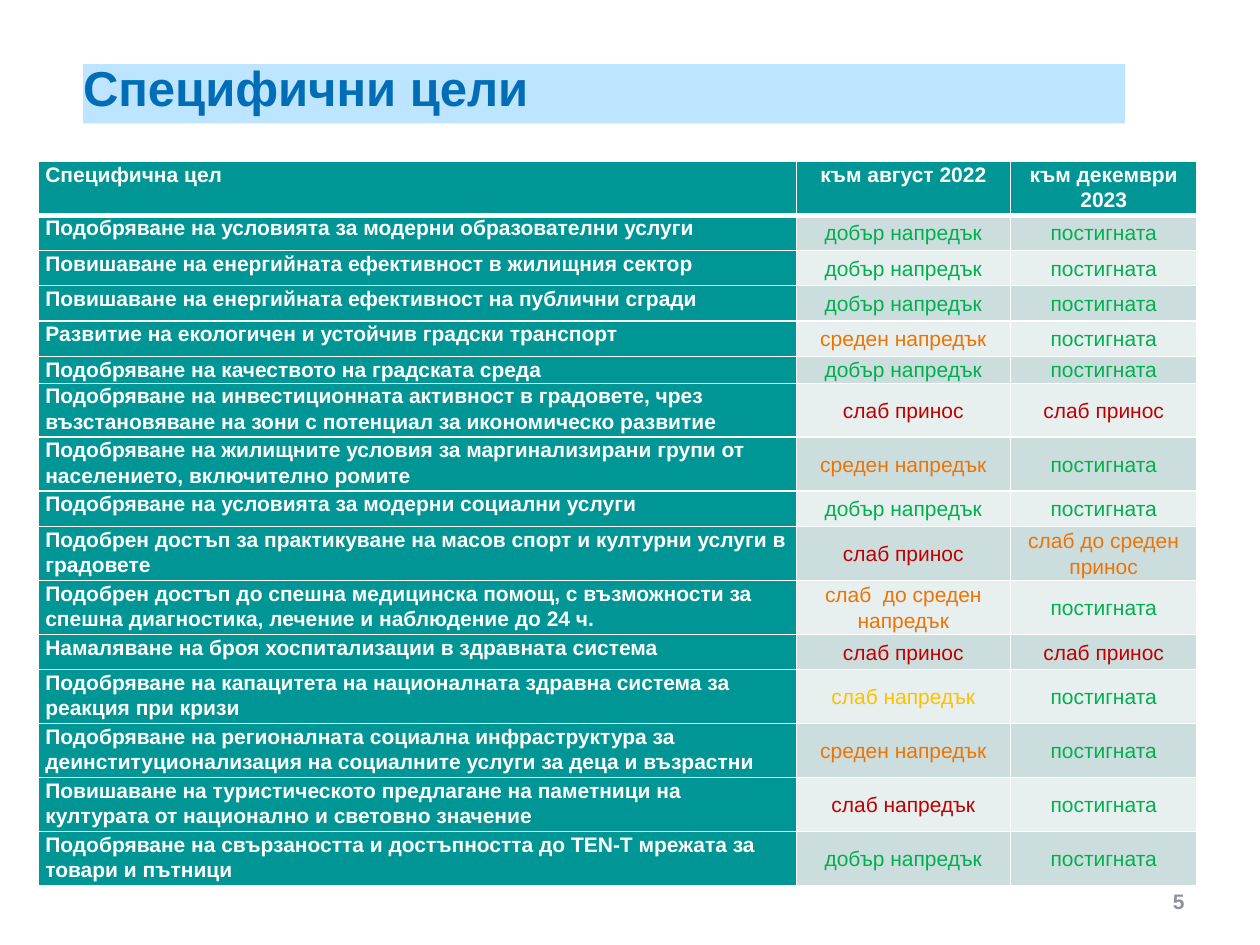
from lxml import etree
from pptx import Presentation
from pptx.dml.color import RGBColor
from pptx.enum import shapes, text
from pptx.oxml import ns
from pptx.util import Inches, Pt

FONT = "Arial"
WHITE, TEAL = "FFFFFF", "009696"
BANDS = ("CCDDDD", "E7EFEF")
GREEN, ORANGE, RED, YELLOW = "00B050", "EC7405", "C00000", "FFC000"

GOOD = ("добър напредък", GREEN)
MEDIUM = ("среден напредък", ORANGE)
WEAK = ("слаб принос", RED)
ACHIEVED = ("постигната", GREEN)

HEADERS = ("Специфична цел", "към август 2022", "към декември 2023")
HEADER_HEIGHT = 0.39
COLUMN_WIDTHS = (6.02, 1.7, 1.48)
GOALS = [
    (0.28, "Подобряване на условията за модерни образователни услуги", GOOD, ACHIEVED),
    (0.28, "Повишаване на енергийната ефективност в жилищния сектор", GOOD, ACHIEVED),
    (0.28, "Повишаване на енергийната ефективност на публични сгради", GOOD, ACHIEVED),
    (0.28, "Развитие на екологичен и устойчив градски транспорт", MEDIUM, ACHIEVED),
    (0.2, "Подобряване на качеството на градската среда", GOOD, ACHIEVED),
    (0.42, "Подобряване на инвестиционната активност в градовете, чрез "
           "възстановяване на зони с потенциал за икономическо развитие", WEAK, WEAK),
    (0.42, "Подобряване на жилищните условия за маргинализирани групи от "
           "населението, включително ромите", MEDIUM, ACHIEVED),
    (0.28, "Подобряване на условията за модерни социални услуги", GOOD, ACHIEVED),
    (0.4, "Подобрен достъп за практикуване на масов спорт и културни услуги в градовете",
     WEAK, ("слаб до среден принос", ORANGE)),
    (0.43, "Подобрен достъп до спешна медицинска помощ, с възможности за "
           "спешна диагностика, лечение и наблюдение до 24 ч.",
     ("слаб  до среден напредък", ORANGE), ACHIEVED),
    (0.28, "Намаляване на броя хоспитализации в здравната система", WEAK, WEAK),
    (0.4, "Подобряване на капацитета на националната здравна система за "
          "реакция при кризи", ("слаб напредък", YELLOW), ACHIEVED),
    (0.42, "Подобряване на регионалната социална инфраструктура за "
           "деинституционализация на социалните услуги за деца и възрастни",
     MEDIUM, ACHIEVED),
    (0.42, "Повишаване на туристическото предлагане на паметници на "
           "културата от национално и световно значение",
     ("слаб напредък", RED), ACHIEVED),
    (0.4, "Подобряване на свързаността и достъпността до TEN-T мрежата за "
          "товари и пътници", GOOD, ACHIEVED),
]


def color(value):
    return RGBColor.from_string(value)


def write(frame, words, size, ink, bold, align):
    paragraph = frame.paragraphs[0]
    paragraph.text = words
    paragraph.alignment = align
    paragraph.font.name = FONT
    paragraph.font.size = Pt(size)
    paragraph.font.bold = bold
    paragraph.font.color.rgb = color(ink)
    return paragraph


def add_title(slide, left, top, width, height):
    shape = slide.shapes.add_shape(
        shapes.MSO_SHAPE.RECTANGLE, left, top, width, height)
    shape.shadow.inherit = False
    shape.fill.solid()
    shape.fill.fore_color.rgb = color("BDE5FF")
    shape.line.fill.background()
    frame = shape.text_frame
    frame.margin_left = frame.margin_right = frame.margin_top = frame.margin_bottom = 0
    frame.vertical_anchor = text.MSO_ANCHOR.TOP
    paragraph = write(frame, "Специфични цели", 28, "006DB6", True, text.PP_ALIGN.LEFT)
    paragraph.line_spacing = Pt(30)


def add_borders(cell, top, bottom):
    properties = cell._tc.get_or_add_tcPr()
    for side, points in (("L", 1), ("R", 1), ("T", top), ("B", bottom)):
        line = etree.SubElement(properties, ns.qn(f"a:ln{side}"), w=str(Pt(points)))
        fill = etree.SubElement(line, ns.qn("a:solidFill"))
        etree.SubElement(fill, ns.qn("a:srgbClr"), val=WHITE)


def fill_cell(cell, row, column, words, ink):
    heading = row == 0 or column == 0
    cell.margin_left = cell.margin_right = Inches(0.06)
    cell.margin_top = cell.margin_bottom = 0
    cell.vertical_anchor = text.MSO_ANCHOR.TOP if heading else text.MSO_ANCHOR.MIDDLE
    add_borders(cell, 3 if row == 1 else 1, 3 if row == 0 else 1)
    cell.fill.solid()
    cell.fill.fore_color.rgb = color(TEAL if heading else BANDS[(row - 1) % 2])
    align = text.PP_ALIGN.CENTER if column else text.PP_ALIGN.LEFT
    paragraph = write(cell.text_frame, words, 12, ink, heading, align)
    paragraph.line_spacing = 1.07


def add_goals_table(slide, left, top, width, height):
    rows = [[(header, WHITE) for header in HEADERS]]
    rows += [[(goal, WHITE), before, after] for _, goal, before, after in GOALS]
    heights = [HEADER_HEIGHT] + [goal[0] for goal in GOALS]
    table = slide.shapes.add_table(
        len(rows), len(HEADERS), left, top, width, height).table
    for column, column_width in zip(table.columns, COLUMN_WIDTHS):
        column.width = Inches(column_width)
    for row, (entries, row_height) in enumerate(zip(rows, heights)):
        table.rows[row].height = Inches(row_height)
        for column, (words, ink) in enumerate(entries):
            fill_cell(table.cell(row, column), row, column, words, ink)


def add_page_number(slide, left, top, width, height):
    frame = slide.shapes.add_textbox(left, top, width, height).text_frame
    frame.word_wrap = True
    frame.vertical_anchor = text.MSO_ANCHOR.MIDDLE
    write(frame, "5", 12, "8C929F", True, text.PP_ALIGN.RIGHT)


def main():
    presentation = Presentation()
    presentation.slide_width = Inches(10)
    presentation.slide_height = Inches(7.5)
    slide = presentation.slides.add_slide(presentation.slide_layouts[6])
    add_page_number(slide, Inches(7.17), Inches(6.95), Inches(2.33), Inches(0.4))
    add_title(slide, Inches(0.66), Inches(0.51), Inches(8.27), Inches(0.47))
    add_goals_table(slide, Inches(0.3), Inches(1.28), Inches(9.2), Inches(5.58))
    presentation.save("out.pptx")


if __name__ == "__main__":
    main()
